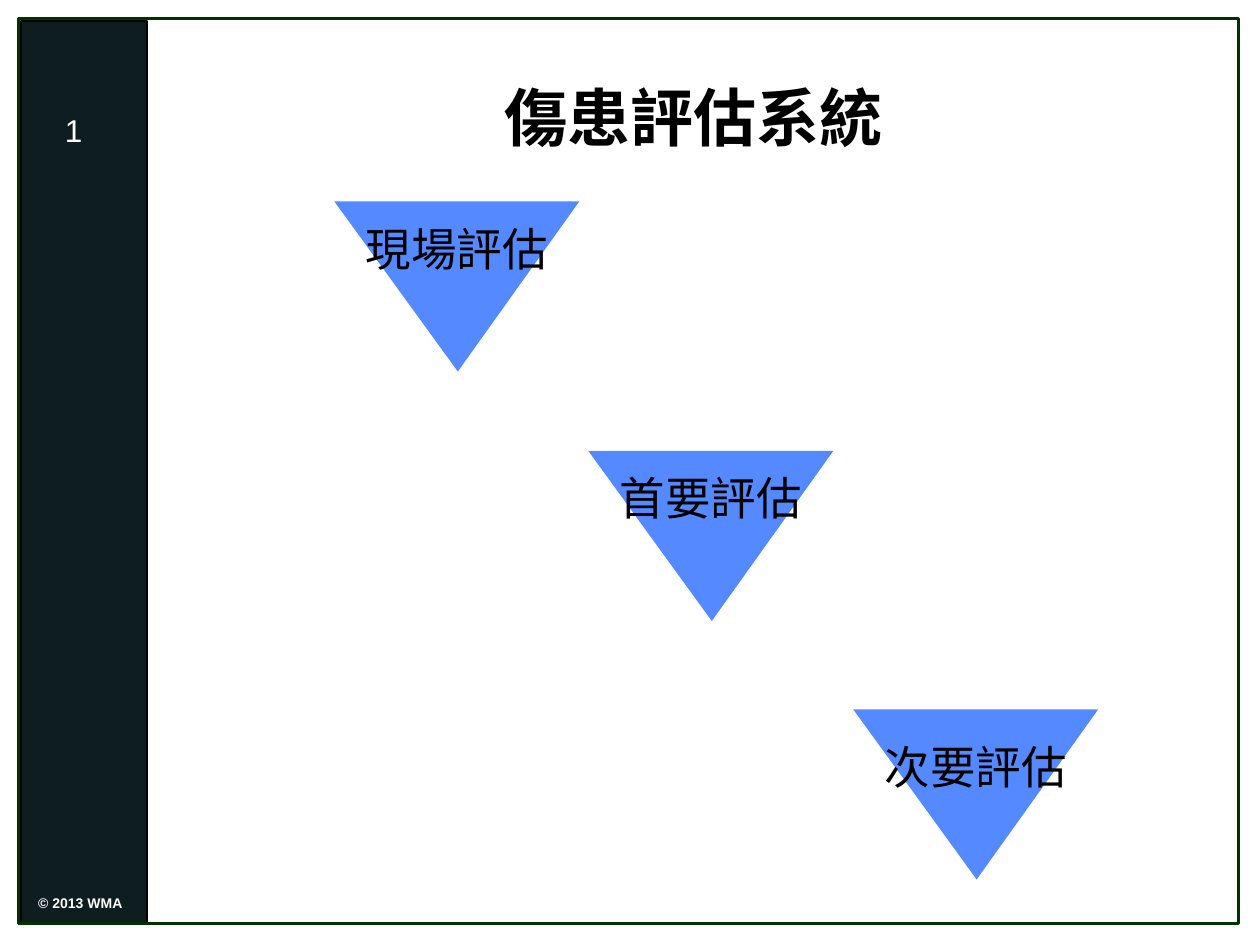
from pptx import Presentation
from pptx.dml.color import RGBColor
from pptx.enum.shapes import MSO_SHAPE
from pptx.enum.text import MSO_ANCHOR, PP_ALIGN
from pptx.util import Cm, Pt

COLORS = {
    "sidebar": "0E1E20",
    "frame": "003300",
    "triangle": "5589FF",
    "black": "000000",
    "white": "FFFFFF",
}


def color(name):
    return RGBColor.from_string(COLORS[name])


def add_text(box, text, size, color_name, font="Arial", bold=False,
             align=PP_ALIGN.CENTER, line_spacing=None, tight=False):
    frame = box.text_frame
    frame.text = text
    frame.word_wrap = not tight
    if tight:
        frame.margin_left = frame.margin_right = Cm(0.05)
        frame.margin_top = frame.margin_bottom = Cm(0.08)
    paragraph = frame.paragraphs[0]
    paragraph.alignment = align
    if line_spacing:
        paragraph.line_spacing = Pt(line_spacing)
    paragraph.font.name = font
    paragraph.font.size = Pt(size)
    paragraph.font.bold = bold
    paragraph.font.color.rgb = color(color_name)


presentation = Presentation()
presentation.slide_width = Cm(25.4)
presentation.slide_height = Cm(19.05)
slide = presentation.slides.add_slide(presentation.slide_layouts[5])
shapes = slide.shapes

# Sidebar and slide frame
sidebar = shapes.add_shape(MSO_SHAPE.RECTANGLE, Cm(0.43), Cm(0.43), Cm(2.54), Cm(18.19))
sidebar.shadow.inherit = False
sidebar.fill.solid()
sidebar.fill.fore_color.rgb = color("sidebar")
sidebar.line.color.rgb = color("black")
sidebar.line.width = Pt(1)

border = shapes.add_shape(MSO_SHAPE.RECTANGLE, Cm(0.38), Cm(0.38), Cm(24.59), Cm(18.24))
border.shadow.inherit = False
border.fill.background()
border.line.color.rgb = color("frame")
border.line.width = Pt(1.5)

# Copyright line and slide number
copyright_box = shapes.add_textbox(Cm(0.64), Cm(17.98), Cm(2.11), Cm(0.64))
add_text(copyright_box, " © 2013 WMA", 8, "white", bold=True,
         align=PP_ALIGN.LEFT, line_spacing=9.1, tight=True)

number_box = shapes.add_textbox(Cm(0.43), Cm(2.11), Cm(2.11), Cm(1.02))
add_text(number_box, "1", 18, "white")

# Title
title = shapes.title
title.left, title.top, title.width, title.height = Cm(4.24), Cm(0.76), Cm(19.48), Cm(3.18)
add_text(title, "傷患評估系統", 36, "black", bold=True)
title.text_frame.vertical_anchor = MSO_ANCHOR.MIDDLE

# Assessment steps: label, triangle left and top, label top and width
TRIANGLE_WIDTH, TRIANGLE_HEIGHT = 4.94, 3.43
TIP_OFFSET = 2.49
steps = [
    ("現場評估", 6.74, 4.06, 4.55, 6.63),
    ("首要評估", 11.86, 9.09, 9.58, 8.13),
    ("次要評估", 17.2, 14.3, 15.01, 11.35),
]
for label, left, top, label_top, label_width in steps:
    tip = left + TIP_OFFSET
    builder = shapes.build_freeform(Cm(tip), Cm(top + TRIANGLE_HEIGHT))
    builder.add_line_segments([(Cm(left), Cm(top)), (Cm(left + TRIANGLE_WIDTH), Cm(top))])
    triangle = builder.convert_to_shape()
    triangle.shadow.inherit = False
    triangle.fill.solid()
    triangle.fill.fore_color.rgb = color("triangle")
    triangle.line.fill.background()

    label_left = left + (TRIANGLE_WIDTH - label_width) / 2
    label_box = shapes.add_textbox(Cm(label_left), Cm(label_top), Cm(label_width), Cm(2.46))
    add_text(label_box, label, 26, "black", font="Roboto", line_spacing=26, tight=True)

presentation.save("out.pptx")
